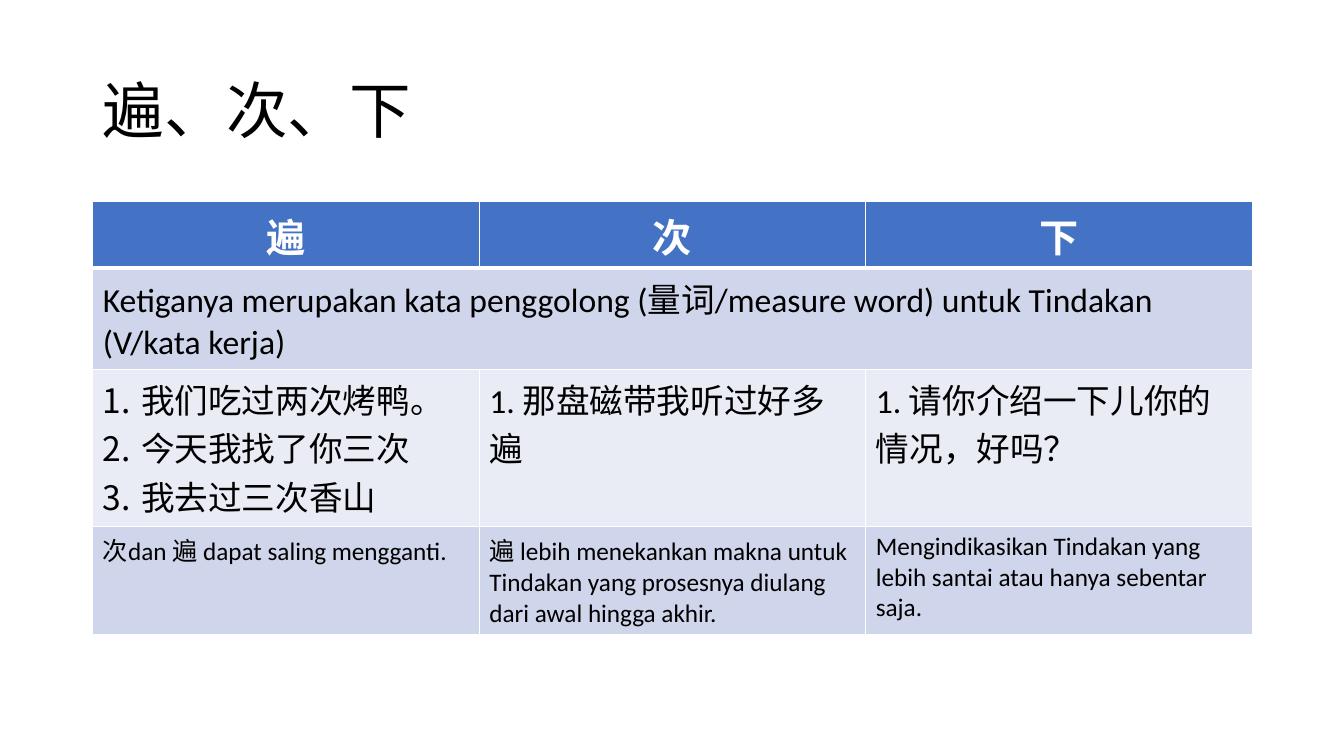
from lxml import etree
from pptx import Presentation
from pptx.dml.color import RGBColor
from pptx.enum.text import MSO_ANCHOR, MSO_AUTO_SIZE, PP_ALIGN
from pptx.oxml.ns import qn
from pptx.util import Inches, Pt

LEFT, CENTER = PP_ALIGN.LEFT, PP_ALIGN.CENTER
MIDDLE = MSO_ANCHOR.MIDDLE
NO_AUTOFIT = MSO_AUTO_SIZE.NONE
TITLE_ONLY = 5

FONT = "Calibri"
COLORS = {
    "text": "000000",
    "white": "FFFFFF",
    "header": "4472C4",
    "band_dark": "CFD5EA",
    "band_light": "E9EBF5",
}

TABLE_LEFT, TABLE_TOP, TABLE_WIDTH = 0.92, 2, 11.5
HEADERS = ["遍", "次", "下"]
DEFINITION = "Ketiganya merupakan kata penggolong (量词/measure word) untuk Tindakan (V/kata kerja)"
EXAMPLES = [
    ["我们吃过两次烤鸭。", "今天我找了你三次", "我去过三次香山"],
    ["1. 那盘磁带我听过好多遍"],
    ["1. 请你介绍一下儿你的情况，好吗？"],
]
NOTES = [
    "次dan 遍 dapat saling mengganti.",
    "遍 lebih menekankan makna untuk Tindakan yang prosesnya diulang dari awal hingga akhir.",
    "Mengindikasikan Tindakan yang lebih santai atau hanya sebentar saja.",
]
# Each row: cell contents as lists of paragraphs, height, fill, text format
ROWS = [
    ([[text] for text in HEADERS], 0.64, "header",
     {"size": 28, "color": "white", "bold": True, "align": CENTER}),
    ([[DEFINITION]], 1.0, "band_dark", {"size": 24}),
    (EXAMPLES, 1.56, "band_light", {"size": 24}),
    ([[text] for text in NOTES], 1.06, "band_dark", {"size": 18}),
]


def rgb(name):
    return RGBColor.from_string(COLORS[name])


def number_paragraph(paragraph):
    properties = paragraph._p.get_or_add_pPr()
    properties.set("marL", str(Inches(0.38)))
    properties.set("indent", str(-Inches(0.38)))
    etree.SubElement(properties, qn("a:buAutoNum"), type="arabicPeriod")


def write_text(text_frame, lines, size=24, color="text", bold=False,
               align=LEFT, numbered=False, line_spacing=None):
    for index, line in enumerate(lines):
        paragraph = text_frame.paragraphs[0] if index == 0 else text_frame.add_paragraph()
        if numbered:
            number_paragraph(paragraph)
        paragraph.alignment = align
        if line_spacing:
            paragraph.line_spacing = line_spacing
        run = paragraph.add_run()
        run.text = line
        run.font.name = FONT
        run.font.size = Pt(size)
        run.font.bold = bold
        run.font.color.rgb = rgb(color)


def set_borders(cell, bottom_width):
    properties = cell._tc.get_or_add_tcPr()
    widths = {"lnL": 1, "lnR": 1, "lnT": 1, "lnB": bottom_width}
    for position, (side, width) in enumerate(widths.items()):
        line = etree.Element(qn(f"a:{side}"), w=str(Pt(width)))
        fill = etree.SubElement(line, qn("a:solidFill"))
        etree.SubElement(fill, qn("a:srgbClr"), val=COLORS["white"])
        properties.insert(position, line)


def add_title(slide, text):
    title = slide.shapes.title
    title.left, title.top = Inches(0.92), Inches(0.4)
    title.width, title.height = Inches(11.5), Inches(1.45)
    frame = title.text_frame
    frame.auto_size = NO_AUTOFIT
    frame.vertical_anchor = MIDDLE
    write_text(frame, [text], size=44, line_spacing=0.9)


def add_word_table(slide):
    total_height = sum(height for _, height, _, _ in ROWS)
    table = slide.shapes.add_table(
        len(ROWS), len(HEADERS), Inches(TABLE_LEFT), Inches(TABLE_TOP),
        Inches(TABLE_WIDTH), Inches(total_height)).table

    for row_index, (contents, height, fill, text_format) in enumerate(ROWS):
        table.rows[row_index].height = Inches(height)
        cells = list(table.rows[row_index].cells)
        for cell in cells:
            cell.fill.solid()
            cell.fill.fore_color.rgb = rgb(fill)
            set_borders(cell, bottom_width=3 if row_index == 0 else 1)
        # A single entry spans the whole row
        if len(contents) == 1:
            cells[0].merge(cells[-1])
        for cell, lines in zip(cells, contents):
            write_text(cell.text_frame, lines, numbered=len(lines) > 1, **text_format)


def main():
    presentation = Presentation()
    presentation.slide_width = Inches(13.33)
    presentation.slide_height = Inches(7.5)
    slide = presentation.slides.add_slide(presentation.slide_layouts[TITLE_ONLY])
    slide.background.fill.solid()
    slide.background.fill.fore_color.rgb = rgb("white")

    add_title(slide, "遍、次、下")
    add_word_table(slide)
    presentation.save("out.pptx")


if __name__ == "__main__":
    main()
